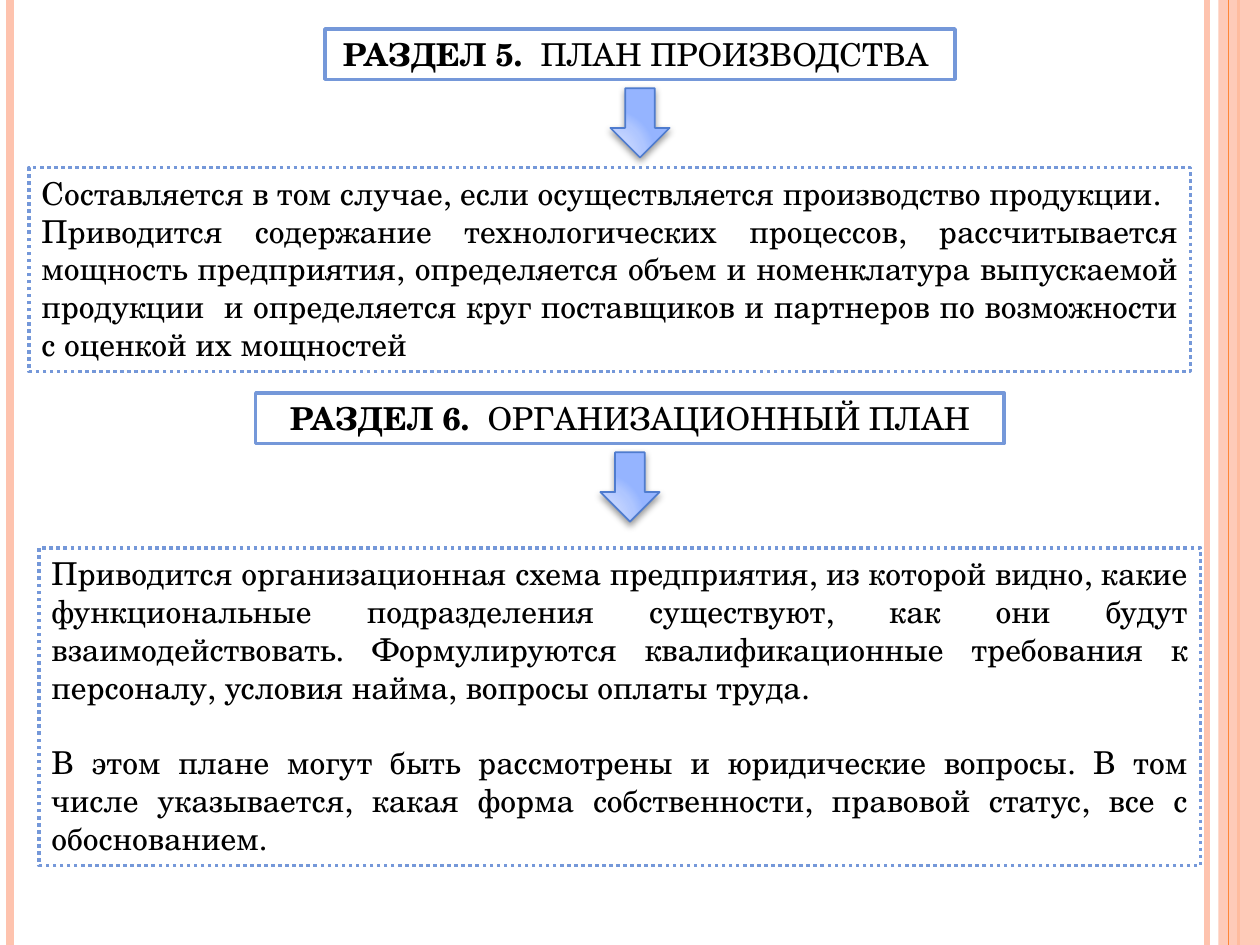
from pptx import Presentation, util as u
from pptx.dml.color import RGBColor
from pptx.enum import dml, shapes, text
from pptx.oxml import parse_xml
from pptx.oxml.ns import qn
from lxml import etree

COLUMNS, ROWS = 100, 75
A = 'xmlns:a="http://schemas.openxmlformats.org/drawingml/2006/main"'

deck = Presentation()
deck.slide_width, deck.slide_height = u.Inches(10), u.Inches(7.5)
cell = deck.slide_width // COLUMNS
page = deck.slides.add_slide(deck.slide_layouts[6])


def paint(color_format, color, opacity=100):
    color_format.rgb = RGBColor.from_string(color)
    if opacity < 100:
        # The public API has no transparency, so the alpha goes on the new colour node
        node = color_format._xFill.find(qn("a:srgbClr"))
        etree.SubElement(node, qn("a:alpha"), val=str(opacity * 1000))


def add_box(preset, left, top, width, height, fill=None, line=None, weight=0):
    """Add a flat shape placed in grid cells."""
    box = page.shapes.add_shape(preset, *(round(n * cell) for n in (left, top, width, height)))
    box.shadow.inherit = False
    if fill:
        box.fill.solid()
        paint(box.fill.fore_color, fill)
    if line:
        paint(box.line.color, line)
        box.line.width = u.Pt(weight)
    else:
        box.line.fill.background()
    return box


# Margin stripes; the band lies over the third line and under the last
stripes = [(95.8, "FEC3AE", 3), (0.8, "FEC3AE", 4.5), (98.3, "FE8637", 1.5),
           "band", (97.5, "FE8637", 0.75)]
for stripe in stripes:
    if stripe == "band":
        band = add_box(shapes.MSO_SHAPE.RECTANGLE, 96.7, 0, 3.3, ROWS, "FEC3AE")
        tint = band.fill._xPr.find(qn("a:solidFill"))[0]
        etree.SubElement(tint, qn("a:alpha"), val="87000")
        continue
    column, color, weight = stripe
    x = round(column * cell)
    line = page.shapes.add_connector(shapes.MSO_CONNECTOR.STRAIGHT, x, 0, x, deck.slide_height)
    paint(line.line.color, color)
    line.line.width = u.Pt(weight)
    etree.SubElement(line._element.spPr, qn("a:effectLst"))

# Each section: heading (left, top, width), body (left, top, height), wording
sections = [
    ((25.8, 2.3, 50), (2.3, 13.3, 16.2), "РАЗДЕЛ 5.  ", "ПЛАН ПРОИЗВОДСТВА ", 0,
     ["Составляется в том случае, если осуществляется производство продукции.",
      "Приводится содержание технологических процессов, рассчитывается мощность предприятия, "
      "определяется объем и номенклатура выпускаемой продукции  и определяется круг "
      "поставщиков и партнеров по возможности с оценкой их мощностей"]),
    ((20.3, 31.2, 59.4), (3.1, 43.5, 25.2), "РАЗДЕЛ 6.  ", "ОРГАНИЗАЦИОННЫЙ ПЛАН", 21.5,
     ["Приводится организационная схема предприятия, из которой видно, какие функциональные "
      "подразделения существуют, как они будут взаимодействовать. Формулируются "
      "квалификационные требования к персоналу, условия найма, вопросы оплаты труда.",
      "В этом плане могут быть рассмотрены и юридические вопросы. В том числе указывается, "
      "какая форма собственности, правовой статус, все с обоснованием."]),
]
heading_height, arrow_width, arrow_height, arrow_drop = 4, 4.7, 5.5, 4.7
body_width = 92.2
stops = "".join(f'<a:gs pos="{share * 1000}"><a:srgbClr val="{color}"/></a:gs>' for share, color in
                [(0, "CFDCFF"), (30, "CBD9FF"), (75, "AFC6FF"), (100, "95B4FF")])

for (left, top, width), (body_left, body_top, body_height), number, title, gap, wording in sections:
    heading = add_box(shapes.MSO_SHAPE.RECTANGLE, left, top, width, heading_height,
                      "FFFFFF", "7598D9", 2)
    para = heading.text_frame.paragraphs[0]
    for part in (number, title):
        span = para.add_run()
        span.text = part
        span.font.bold = part == number

    arrow = add_box(shapes.MSO_SHAPE.DOWN_ARROW, left + (width - arrow_width) / 2,
                    top + arrow_drop, arrow_width, arrow_height, None, "4F7CCF", 1)
    properties = arrow._element.spPr
    properties.find(qn("a:prstGeom")).addnext(parse_xml(
        f'<a:gradFill {A} rotWithShape="1"><a:gsLst>{stops}</a:gsLst><a:path path="circle">'
        '<a:fillToRect l="5000" t="100000" r="120000" b="10000"/></a:path></a:gradFill>'))
    properties.find(qn("a:effectLst")).append(parse_xml(
        f'<a:outerShdw {A} blurRad="{u.Pt(4)}" dist="{u.Pt(2)}" dir="5400000" rotWithShape="0">'
        '<a:srgbClr val="000000"><a:alpha val="40000"/></a:srgbClr></a:outerShdw>'))

    body = add_box(shapes.MSO_SHAPE.RECTANGLE, body_left, body_top, body_width, body_height,
                   "FFFFFF", "7598D9", 2)
    body.line.dash_style = dml.MSO_LINE.ROUND_DOT
    body.text_frame.text = "\n".join(wording)
    body.text_frame.paragraphs[1].space_before = u.Pt(gap)

    for box, alignment in ((heading, text.PP_ALIGN.CENTER), (body, text.PP_ALIGN.JUSTIFY)):
        frame = box.text_frame
        frame.word_wrap = True
        frame.auto_size = text.MSO_AUTO_SIZE.SHAPE_TO_FIT_TEXT
        frame.vertical_anchor = text.MSO_ANCHOR.TOP
        for para in frame.paragraphs:
            para.alignment = alignment
            for span in para.runs:
                span.font.name = "TeX Gyre Schola"
                span.font.size = u.Pt(18)
                paint(span.font.color, "000000")

deck.save("out.pptx")
